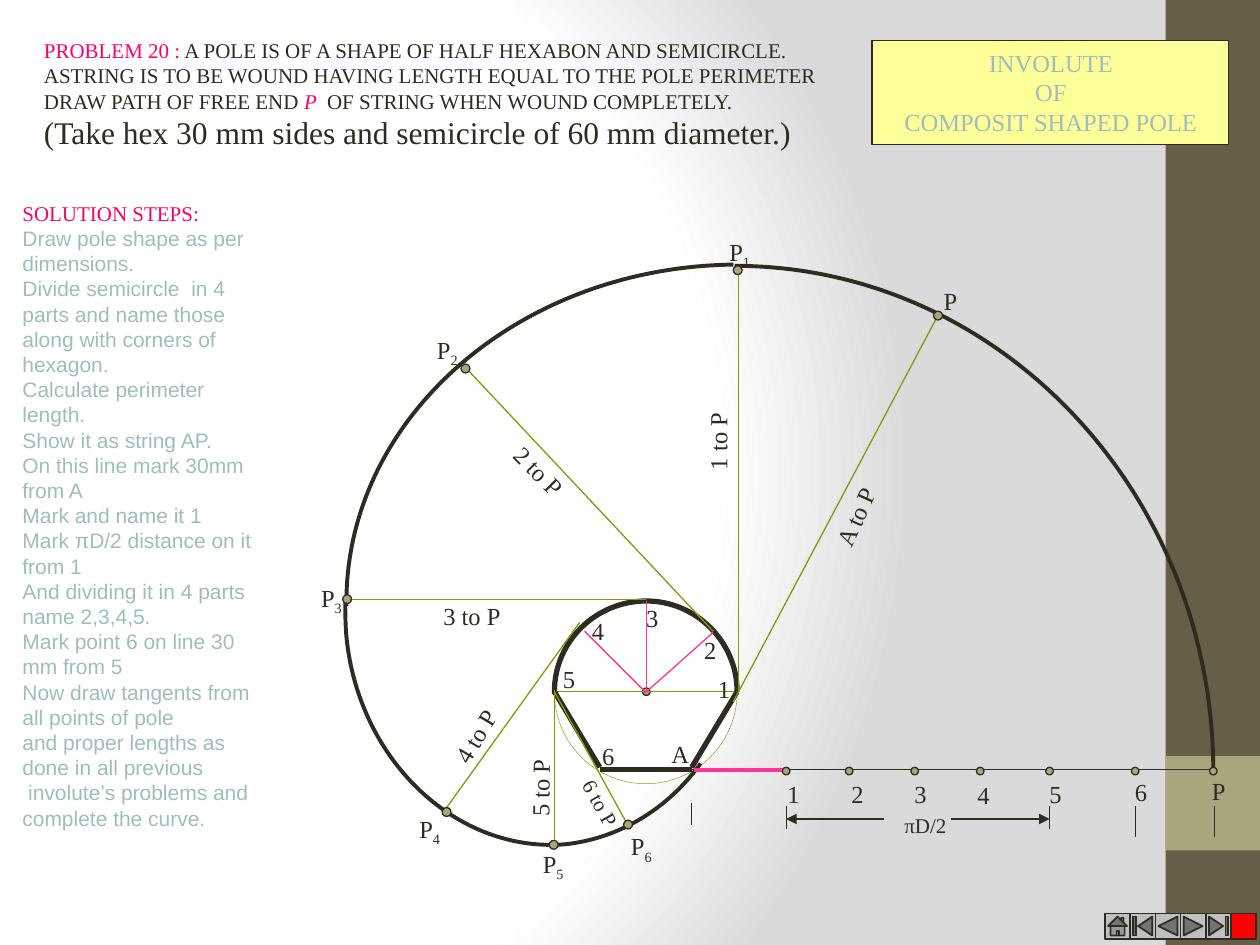
"""Build a slide on the involute of a composite shaped pole."""
from lxml import etree
from pptx import Presentation
from pptx.dml.color import RGBColor
from pptx.enum.shapes import MSO_CONNECTOR, MSO_SHAPE
from pptx.enum.text import MSO_AUTO_SIZE, PP_ALIGN
from pptx.oxml import parse_xml
from pptx.oxml.ns import qn
from pptx.util import Inches, Pt

STRAIGHT = MSO_CONNECTOR.STRAIGHT
RECTANGLE, OVAL = MSO_SHAPE.RECTANGLE, MSO_SHAPE.OVAL
GROW, CENTER = MSO_AUTO_SIZE.SHAPE_TO_FIT_TEXT, PP_ALIGN.CENTER
BUTTONS = [MSO_SHAPE.ACTION_BUTTON_HOME, MSO_SHAPE.ACTION_BUTTON_BEGINNING,
           MSO_SHAPE.ACTION_BUTTON_BACK_OR_PREVIOUS,
           MSO_SHAPE.ACTION_BUTTON_FORWARD_OR_NEXT,
           MSO_SHAPE.ACTION_BUTTON_END, MSO_SHAPE.ACTION_BUTTON_CUSTOM]
INK = RGBColor(0x2F, 0x2B, 0x20)
GREEN = RGBColor(0x84, 0x9A, 0x0A)
PINK = RGBColor(0xFF, 0x33, 0x99)
CRIMSON = RGBColor(0xFF, 0x00, 0x66)
KHAKI = RGBColor(0xA9, 0xA5, 0x7C)
BROWN = RGBColor(0x67, 0x5E, 0x47)
TEAL = RGBColor(0x9C, 0xBE, 0xBD)
YELLOW = RGBColor(0xFF, 0xFF, 0x99)
WHITE = RGBColor(0xFF, 0xFF, 0xFF)
SILVER = RGBColor(0xDA, 0xDA, 0xDA)
GRAY = RGBColor(0xC0, 0xC0, 0xC0)
RED = RGBColor(0xFF, 0x00, 0x00)
SERIF, SANS = "Times New Roman", "Arial"

deck = Presentation()
deck.slide_width, deck.slide_height = Inches(10), Inches(7.5)
page = deck.slides.add_slide(deck.slide_layouts[6])


def add_figure(kind, left, top, width, height, fill, line=None, weight=0.75):
    figure = page.shapes.add_shape(
        kind, Inches(left), Inches(top), Inches(width), Inches(height))
    figure.shadow.inherit = False
    figure.fill.solid()
    figure.fill.fore_color.rgb = fill
    if line is None:
        figure.line.fill.background()
    else:
        figure.line.color.rgb = line
        figure.line.width = Pt(weight)


def add_text(left, top, width, height, paragraphs, wrap=False, angle=0):
    box = page.shapes.add_textbox(
        Inches(left), Inches(top), Inches(width), Inches(height))
    box.rotation = angle
    frame = box.text_frame
    frame.word_wrap = wrap
    frame.auto_size = GROW
    for index, (spans, size, face, align) in enumerate(paragraphs):
        para = frame.add_paragraph() if index else frame.paragraphs[0]
        para.font.size, para.font.name = Pt(size), face
        para.alignment = align
        for words, color, style in spans:
            span = para.add_run()
            span.text = words
            span.font.color.rgb = color
            if style == "italic":
                span.font.italic = True
            elif style == "subscript":
                span._r.get_or_add_rPr().set("baseline", "-25000")


page.background.fill.solid()
backdrop = page.element.find(".//" + qn("p:bgPr"))
stops = "".join(
    f'<a:gs pos="{place}000"><a:srgbClr val="{color}"/></a:gs>'
    for place, color in [(0, WHITE), (75, WHITE), (100, SILVER)])
backdrop.replace(backdrop[0], parse_xml(
    '<a:gradFill xmlns:a="http://schemas.openxmlformats.org/drawingml/2006/main" '
    f'rotWithShape="1"><a:gsLst>{stops}</a:gsLst><a:path path="circle">'
    '<a:fillToRect l="20000" t="50000" r="100000" b="50000"/></a:path></a:gradFill>'))

add_figure(RECTANGLE, 9.25, 0, 0.75, 7.5, BROWN)
add_figure(RECTANGLE, 9.25, 6, 0.75, 0.75, KHAKI)
add_figure(OVAL, 4.4, 4.77, 1.45, 1.45, WHITE, GREEN, 0.25)

curves = [
    (3, [(4.4, 5.51), (4.4, 5.5), (4.4, 5.5), (4.4, 5.49),
         (4.4, 5.09), (4.73, 4.77), (5.13, 4.77),
         (5.52, 4.77), (5.85, 5.09), (5.85, 5.49)]),
    (2.25, [(5.83, 2.11), (7.93, 2.11), (9.63, 3.91), (9.63, 6.13)]),
    (2.25, [(5.82, 2.1), (4.11, 2.12), (2.73, 3.33), (2.75, 4.81)]),
    (2.25, [(2.74, 4.75), (2.74, 4.85), (2.74, 4.96), (2.75, 5.06),
            (2.85, 6.05), (3.64, 6.78), (4.5, 6.7),
            (4.92, 6.65), (5.3, 6.42), (5.56, 6.06)]),
]
for weight, knots in curves:
    start, *controls = [(Inches(x), Inches(y)) for x, y in knots]
    builder = page.shapes.build_freeform(*start)
    builder.add_line_segments(controls, close=False)
    curve = builder.convert_to_shape()
    curve.shadow.inherit = False
    curve.fill.background()
    curve.line.color.rgb = INK
    curve.line.width = Pt(weight)
    outline = curve._element.find(".//" + qn("a:path"))
    segments = outline.findall(qn("a:lnTo"))
    for first in range(0, len(segments), 3):
        bezier = etree.SubElement(outline, qn("a:cubicBezTo"))
        for segment in segments[first:first + 3]:
            bezier.append(segment[0])
            outline.remove(segment)

AXIS = 6.11
add_figure(OVAL, 5.1, 5.46, 0.06, 0.06, KHAKI, INK)
line_sets = [
    (GREEN, 0.75, False, [(4.4, 5.49, 5.85, 5.49)]),
    (INK, 3, False, [(4.76, AXIS, 5.49, AXIS), (4.4, 5.49, 4.76, 6.09),
                     (5.85, 5.49, 5.49, 6.09)]),
    (INK, 0.75, False, [(4.76, AXIS, 9.64, AXIS), (6.24, 6.4, 6.24, 6.58),
                        (8.33, 6.4, 8.33, 6.58), (5.49, 6.37, 5.49, 6.55),
                        (9.01, 6.4, 9.01, 6.64), (9.64, 6.4, 9.64, 6.64)]),
    (INK, 0.75, True, [(7.55, 6.5, 8.33, 6.5), (7.02, 6.5, 6.24, 6.5)]),
    (PINK, 2.25, False, [(5.51, AXIS, 6.23, AXIS)]),
    (GREEN, 0.75, False, [(5.86, 5.5, 5.86, 2.13), (5.66, 5.01, 3.67, 2.89),
                          (2.73, 4.76, 5.13, 4.76), (3.53, 6.43, 4.6, 4.94),
                          (7.43, 2.53, 5.82, 5.57), (4.4, 6.69, 4.4, 5.48),
                          (4.4, 5.49, 5, 6.58)]),
    (PINK, 0.75, False, [(5.13, 5.49, 5.13, 4.77), (5.12, 5.49, 4.64, 5.01),
                         (5.12, 5.5, 5.66, 5.02)]),
]
for color, weight, arrow, ends in line_sets:
    for end in ends:
        line = page.shapes.add_connector(STRAIGHT, *map(Inches, end))
        line.line.color.rgb = color
        line.line.width = Pt(weight)
        properties = line._element.spPr
        if arrow:
            etree.SubElement(properties.find(qn("a:ln")), qn("a:tailEnd"), type="triangle")
        etree.SubElement(properties, qn("a:effectLst"))

for left in [6.21, 6.71, 7.23, 7.75, 8.3, 8.98, 9.6]:
    add_figure(OVAL, left, 6.09, 0.06, 0.06, KHAKI, INK)
for left, top in [(5.82, 2.11), (3.66, 2.89), (2.72, 4.72), (3.51, 6.41),
                  (7.41, 2.47), (4.36, 6.67), (4.95, 6.51)]:
    add_figure(OVAL, left, top, 0.07, 0.07, KHAKI, INK)

pole_numbers = [(5.6, 5.3), (5.49, 4.99), (5.03, 4.74), (4.6, 4.84), (4.37, 5.22), (4.68, 5.83)]
string_numbers = [(6.15, 6.13), (6.66, 6.13), (7.16, 6.13), (7.66, 6.14), (8.23, 6.13), (8.91, 6.12)]
for places in (pole_numbers, string_numbers):
    for number, (left, top) in enumerate(places, 1):
        add_text(left, top, 0.3, 0.33, [([(str(number), INK, None)], 14, SERIF, None)])

curve_points = [(5.69, 1.83), (3.37, 2.61), (2.45, 4.58), (3.23, 6.41), (4.21, 6.69), (4.91, 6.55)]
for number, (left, top) in enumerate(curve_points, 1):
    spans = [("P", INK, None), (str(number), INK, "subscript")]
    add_text(left, top, 0.37, 0.33, [(spans, 14, SERIF, None)])

for words, left, top, width, height, angle, size in [
        ("A", 5.23, 5.82, 0.34, 0.33, 0, 14), ("P", 9.52, 6.11, 0.31, 0.33, 0, 14),
        ("P", 7.39, 2.22, 0.31, 0.33, 0, 14), ("πD/2", 7.08, 6.4, 0.54, 0.3, 0, 12),
        ("A to P", 6.44, 3.93, 0.7, 0.33, 294.2, 14),
        ("1 to P", 5.36, 3.33, 0.67, 0.33, 270, 14),
        ("2 to P", 3.95, 3.58, 0.67, 0.33, 45.3, 14),
        ("3 to P", 3.42, 4.72, 0.67, 0.33, 0, 14),
        ("4 to P", 3.44, 5.67, 0.67, 0.33, 300.7, 14),
        ("5 to P", 3.95, 6.08, 0.67, 0.33, 270.5, 14),
        ("6 to P", 4.47, 6.23, 0.6, 0.3, 60.4, 12)]:
    add_text(left, top, width, height, [([(words, INK, None)], size, SERIF, None)], angle=angle)

add_figure(RECTANGLE, 6.92, 0.32, 2.83, 0.83, YELLOW, INK)
add_text(7, 0.33, 2.68, 0.8, [
    ([(words, TEAL, None)], 14, SERIF, CENTER)
    for words in ("INVOLUTE", "OF", "COMPOSIT SHAPED POLE")])

problem = [
    [("PROBLEM 20 :", CRIMSON, None),
     (" A POLE IS OF A SHAPE OF HALF HEXABON AND SEMICIRCLE.", INK, None)],
    [("ASTRING IS TO BE WOUND HAVING LENGTH EQUAL TO THE POLE PERIMETER", INK, None)],
    [("DRAW PATH OF FREE END ", INK, None), ("P ", CRIMSON, "italic"),
     (" OF STRING WHEN WOUND COMPLETELY.", INK, None)],
]
dimensions = [("(Take hex 30 mm sides and semicircle of 60 mm diameter.)", INK, None)]
add_text(0.25, 0.25, 6.38, 0.97, [(spans, 12, SERIF, None) for spans in problem]
         + [(dimensions, 18, SERIF, None)])

solution = [
    "Draw pole shape as per dimensions.",
    "Divide semicircle  in 4 parts and name those along with corners of  hexagon.",
    "Calculate perimeter length.", "Show it as string AP.",
    "On this line mark 30mm from A", "Mark and name it 1",
    "Mark πD/2 distance on it from 1", "And dividing it in 4 parts name 2,3,4,5.",
    "Mark point 6 on line 30 mm from 5", "Now draw tangents from all points of pole",
    "and proper lengths as done in all previous",
    " involute’s problems and complete the curve.",
]
add_text(0.08, 1.54, 2.17, 5.09,
         [([("SOLUTION STEPS:", CRIMSON, None)], 12, SERIF, None)]
         + [([(words, TEAL, None)], 12, SANS, None) for words in solution], wrap=True)

for index, kind in enumerate(BUTTONS):
    fill = RED if kind == BUTTONS[-1] else GRAY
    add_figure(kind, 8.77 + 0.2 * index, 7.25, 0.2, 0.2, fill, INK, 1)

deck.save("out.pptx")
